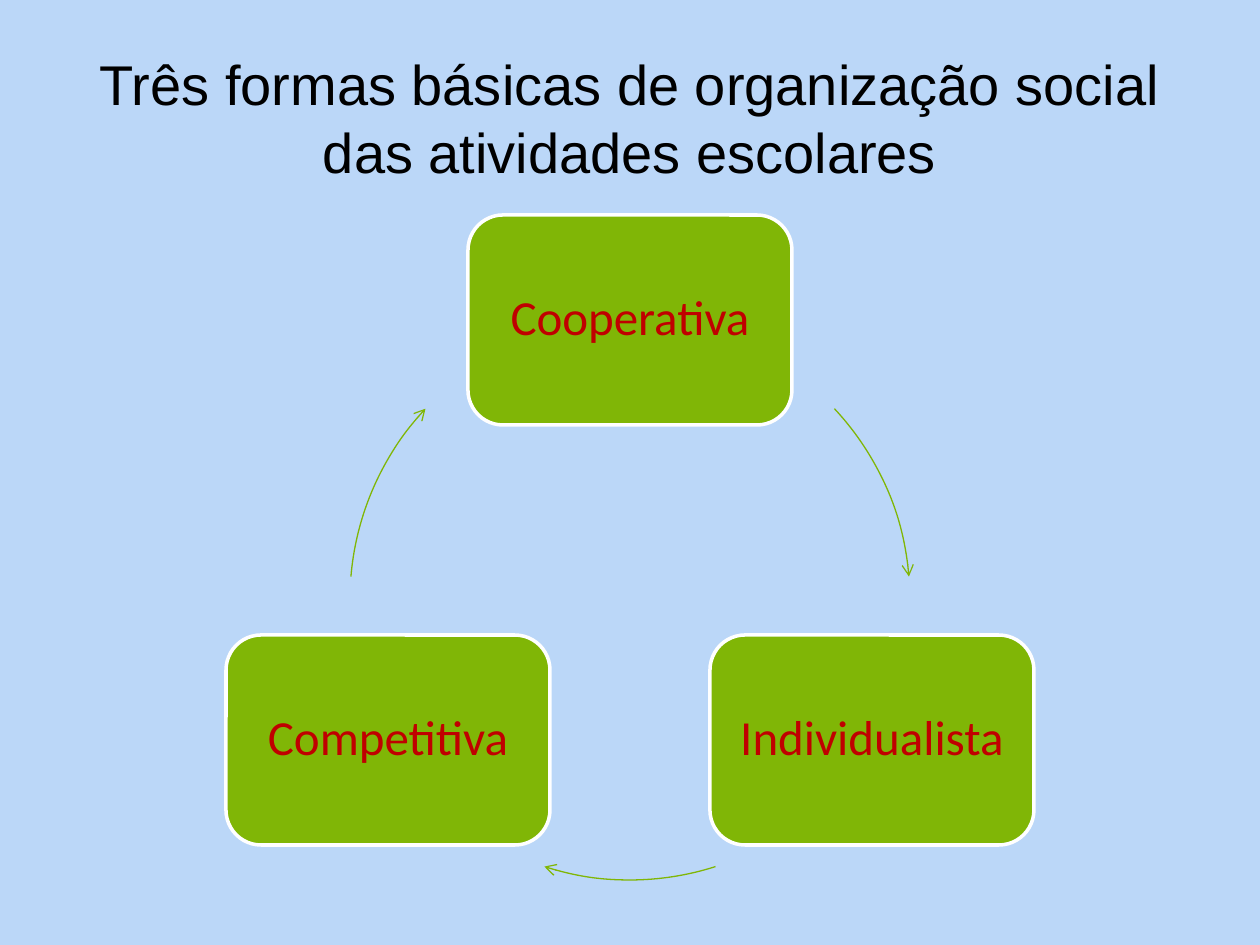
import math

from lxml import etree
from pptx import Presentation
from pptx.dml.color import RGBColor
from pptx.enum.shapes import MSO_SHAPE
from pptx.enum.text import MSO_ANCHOR, PP_ALIGN
from pptx.oxml.ns import qn
from pptx.util import Emu, Pt

ROUNDED = MSO_SHAPE.ROUNDED_RECTANGLE
ARC = MSO_SHAPE.ARC
CENTER = PP_ALIGN.CENTER
MIDDLE = MSO_ANCHOR.MIDDLE

PX = 914400 // 126
BACKGROUND, GREEN, WHITE, RED, BLACK = "BBD7F8", "80B606", "FFFFFF", "C00000", "000000"

# Cycle geometry in px
CYCLE_X, CYCLE_Y, RADIUS = 630, 600, 280
BOX_W, BOX_H = 324, 210

# Each form with its angle on the cycle, clockwise from the right
FORMS = [("Cooperativa", -90), ("Individualista", 30), ("Competitiva", 150)]
# Start and end angles of the arrows between the forms
ARROWS = [(316.9, 355.2), (72.2, 107.8), (184.8, 223.1)]


def px(*lengths):
    return [Emu(round(length) * PX) for length in lengths]


def color(hex_code):
    return RGBColor.from_string(hex_code)


def write(shape, text, *, font, size, hex_code, inset, spacing=1.0):
    frame = shape.text_frame
    frame.word_wrap = True
    frame.vertical_anchor = MIDDLE
    frame.margin_left = frame.margin_right = px(inset)[0]
    frame.margin_top = frame.margin_bottom = px(inset / 2)[0]
    paragraph = frame.paragraphs[0]
    paragraph.alignment = CENTER
    paragraph.line_spacing = spacing
    run = paragraph.add_run()
    run.text = text
    run.font.name = font
    run.font.size = Pt(size)
    run.font.color.rgb = color(hex_code)


def outline(shape, hex_code, width):
    shape.shadow.inherit = False
    shape.line.color.rgb = color(hex_code)
    shape.line.width = Pt(width)


def add_title(slide, text):
    title = slide.shapes.add_textbox(*px(63, 38, 1134, 158))
    write(title, text, font="Arial", size=32, hex_code=BLACK, inset=12)


def add_form(slide, name, angle):
    center_x = CYCLE_X + RADIUS * math.cos(math.radians(angle))
    center_y = CYCLE_Y + RADIUS * math.sin(math.radians(angle))
    box = slide.shapes.add_shape(
        ROUNDED, *px(center_x - BOX_W / 2, center_y - BOX_H / 2, BOX_W, BOX_H))
    box.fill.solid()
    box.fill.fore_color.rgb = color(GREEN)
    outline(box, WHITE, 2)
    write(box, name, font="Calibri", size=28, hex_code=RED, inset=15, spacing=0.9)


def add_arrow(slide, start, end):
    arrow = slide.shapes.add_shape(
        ARC, *px(CYCLE_X - RADIUS, CYCLE_Y - RADIUS, 2 * RADIUS, 2 * RADIUS))
    # Angles are stored in 1/60000 degree, adjustments in 1/100000
    arrow.adjustments[0] = start * 0.6
    arrow.adjustments[1] = end * 0.6
    arrow.fill.background()
    outline(arrow, GREEN, 0.75)
    line = arrow.line._get_or_add_ln()
    etree.SubElement(line, qn("a:tailEnd"), type="arrow")


def main():
    deck = Presentation()
    deck.slide_width, deck.slide_height = px(1260, 945)
    slide = deck.slides.add_slide(deck.slide_layouts[6])
    slide.background.fill.solid()
    slide.background.fill.fore_color.rgb = color(BACKGROUND)

    add_title(slide, "Três formas básicas de organização social das atividades escolares")

    # Cycle of forms, each followed by the arrow to the next
    for (name, angle), (start, end) in zip(FORMS, ARROWS):
        add_form(slide, name, angle)
        add_arrow(slide, start, end)

    deck.save("out.pptx")


if __name__ == "__main__":
    main()
